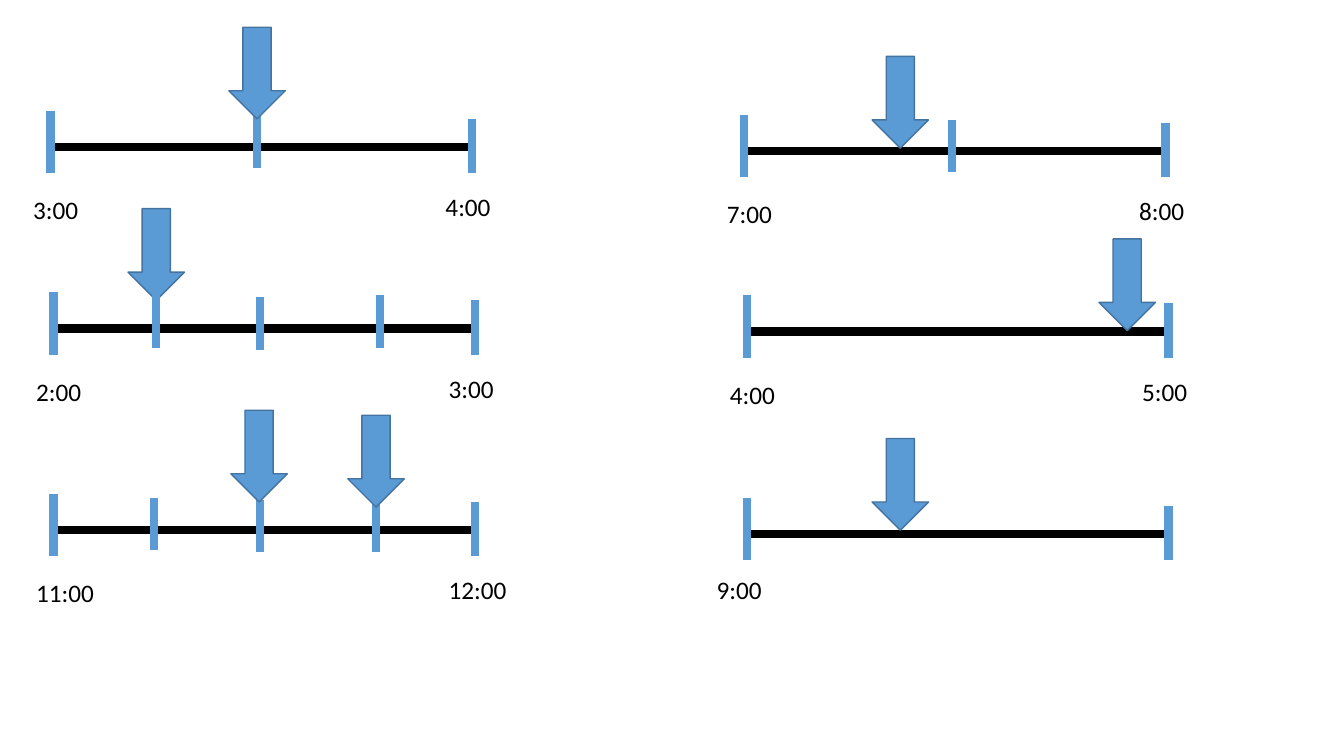
from lxml.etree import SubElement
from pptx import Presentation
from pptx.dml.color import RGBColor
from pptx.enum.shapes import MSO_CONNECTOR, MSO_SHAPE
from pptx.enum.text import MSO_AUTO_SIZE
from pptx.oxml.ns import qn
from pptx.util import Inches, Pt

# Content: lengths in inches, measured from the left end of each time line.
# Ticks are (offset, top); arrows are (offset of tip, height of tip).
TIMELINES = [
    {"origin": (0.5, 1.46), "labels": ("3:00", "4:00"),
     "ticks": [(2.05, -0.31)], "arrows": [(2.05, -0.28)]},
    {"origin": (0.53, 3.26), "labels": ("2:00", "3:00"),
     "ticks": [(1.02, -0.33), (2.05, -0.31), (3.24, -0.33)],
     "arrows": [(1.02, -0.28)], "ticks_in_front": True},
    {"origin": (0.53, 5.26), "labels": ("11:00", "12:00"),
     "ticks": [(1.0, -0.32), (2.05, -0.3), (3.2, -0.3)],
     "arrows": [(2.04, -0.28), (3.2, -0.23)]},
    {"origin": (7.38, 1.5), "labels": ("7:00", "8:00"),
     "ticks": [(2.06, -0.31)], "arrows": [(1.55, -0.03)]},
    {"origin": (7.41, 3.29), "labels": ("4:00", "5:00"),
     "ticks": [], "arrows": [(3.77, -0.01)]},
    {"origin": (7.41, 5.3), "labels": ("9:00",), "label_shift": (-0.13, -0.07),
     "ticks": [], "arrows": [(1.52, -0.04)]},
]
COLORS = {"line": "000000", "accent": "5B9BD5", "outline": "43739E", "text": "000000"}

# Shared measures
LINE_LENGTH, END_TICK_OFFSET = 4.15, 4.18
TICK_HEIGHT, TICK_FOOT = 0.52, 0.26
START_TICK_TOP, END_TICK_TOP = -0.36, -0.28
ARROW_WIDTH, ARROW_HEIGHT = 0.56, 0.91
LABEL_OFFSETS = [(-0.27, 0.42), (3.82, 0.39)]
LABEL_HEIGHT = 0.4


def add_line(slide, start, end, color):
    connector = slide.shapes.add_connector(
        MSO_CONNECTOR.STRAIGHT, *(Inches(value) for value in (*start, *end)))
    connector.line.color.rgb = RGBColor.from_string(COLORS[color])
    connector.line.width = Pt(6)
    SubElement(connector._element.spPr, qn("a:effectLst"))


def add_arrow(slide, tip_x, tip_y):
    shape = slide.shapes.add_shape(
        MSO_SHAPE.DOWN_ARROW, Inches(tip_x - ARROW_WIDTH / 2),
        Inches(tip_y - ARROW_HEIGHT), Inches(ARROW_WIDTH), Inches(ARROW_HEIGHT))
    shape.shadow.inherit = False
    shape.fill.solid()
    shape.fill.fore_color.rgb = RGBColor.from_string(COLORS["accent"])
    shape.line.color.rgb = RGBColor.from_string(COLORS["outline"])
    shape.line.width = Pt(1)


def add_text(slide, text, left, top, size=18, font="Calibri", color="text"):
    width = 0.65 if len(text) == 4 else 0.78
    box = slide.shapes.add_textbox(
        Inches(left), Inches(top), Inches(width), Inches(LABEL_HEIGHT))
    box.text_frame.word_wrap = False
    box.text_frame.auto_size = MSO_AUTO_SIZE.SHAPE_TO_FIT_TEXT
    run = box.text_frame.paragraphs[0].add_run()
    run.text = text
    run.font.size = Pt(size)
    run.font.name = font
    run.font.color.rgb = RGBColor.from_string(COLORS[color])


def add_timeline(slide, timeline):
    x, y = timeline["origin"]
    add_line(slide, (x, y), (x + LINE_LENGTH, y), "line")

    # End ticks share a foot; inner ticks share a height
    ticks = [(0, START_TICK_TOP, TICK_FOOT), (END_TICK_OFFSET, END_TICK_TOP, TICK_FOOT)]
    ticks += [(offset, top, top + TICK_HEIGHT) for offset, top in timeline["ticks"]]

    def draw_ticks():
        for offset, top, foot in ticks:
            add_line(slide, (x + offset, y + top), (x + offset, y + foot), "accent")

    def draw_arrows():
        for offset, tip in timeline["arrows"]:
            add_arrow(slide, x + offset, y + tip)

    layers = [draw_ticks, draw_arrows]
    if timeline.get("ticks_in_front"):
        layers.reverse()
    for draw_layer in layers:
        draw_layer()

    # Hour labels
    shift_x, shift_y = timeline.get("label_shift", (0, 0))
    for text, (left, top) in zip(timeline["labels"], LABEL_OFFSETS):
        add_text(slide, text, x + left + shift_x, y + top + shift_y)


def main():
    presentation = Presentation()
    presentation.slide_width = Inches(13.33)
    presentation.slide_height = Inches(7.5)
    slide = presentation.slides.add_slide(presentation.slide_layouts[6])
    for timeline in TIMELINES:
        add_timeline(slide, timeline)
    presentation.save("out.pptx")


if __name__ == "__main__":
    main()
